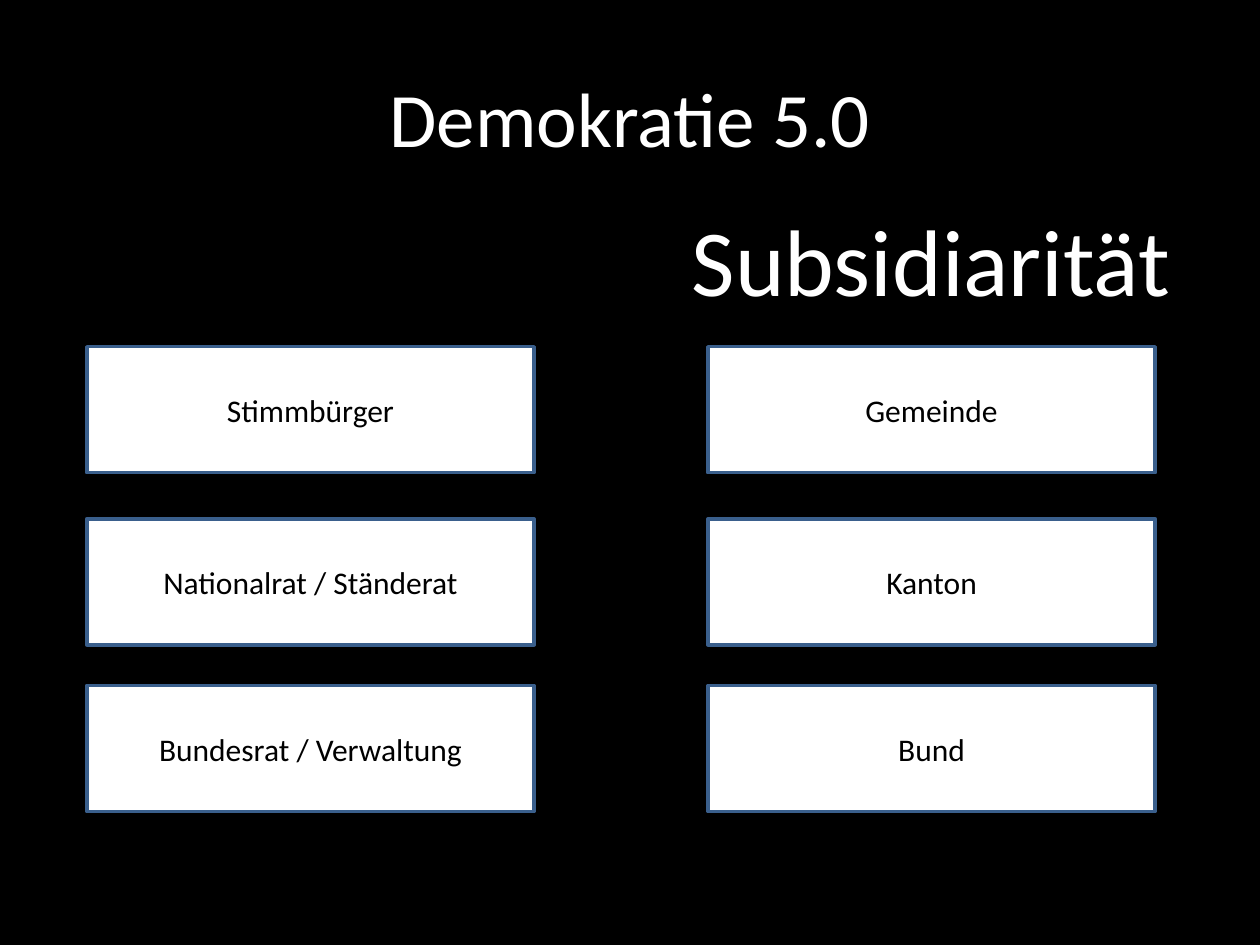
from dataclasses import dataclass

from lxml import etree
from pptx import Presentation, util as u
from pptx.dml.color import RGBColor
from pptx.enum import shapes, text
from pptx.oxml.ns import qn


@dataclass(frozen=True)
class Theme:
    font: str = "Calibri"
    black: RGBColor = RGBColor(0, 0, 0)
    white: RGBColor = RGBColor(255, 255, 255)
    edge: RGBColor = RGBColor(0x3A, 0x5F, 0x8C)
    title: int = 44
    head: int = 54
    label: int = 18


@dataclass(frozen=True)
class Stack:
    left: float
    labels: tuple[str, ...]


THEME = Theme()
TOPS = (6.99, 10.46, 13.82)
STACKS = (
    Stack(1.75, ("Stimmbürger", "Nationalrat / Ständerat",
                 "Bundesrat / Verwaltung")),
    Stack(14.27, ("Gemeinde", "Kanton", "Bund")),
)


def write(shape, words: str, size: int, color: RGBColor) -> None:
    """Put one centred line of text into a shape."""
    frame = shape.text_frame
    frame.text = words
    para = frame.paragraphs[0]
    para.alignment = text.PP_ALIGN.CENTER
    para.font.name = THEME.font
    para.font.size = u.Pt(size)
    para.font.color.rgb = color


def place(shape, left: float, top: float, width: float, height: float) -> None:
    shape.left, shape.top = u.Cm(left), u.Cm(top)
    shape.width, shape.height = u.Cm(width), u.Cm(height)


def draw_stack(slide, stack: Stack) -> None:
    """Draw a grouped column of labelled boxes."""
    group = slide.shapes.add_group_shape()
    for top, label in zip(TOPS, stack.labels):
        box = group.shapes.add_shape(
            shapes.MSO_SHAPE.RECTANGLE,
            u.Cm(stack.left), u.Cm(top), u.Cm(9.02), u.Cm(2.54))
        box.shadow.inherit = False
        box.fill.solid()
        box.fill.fore_color.rgb = THEME.white
        box.line.color.rgb = THEME.edge
        box.line.width = u.Pt(2)
        box.text_frame.vertical_anchor = text.MSO_ANCHOR.MIDDLE
        write(box, label, THEME.label, THEME.black)


def main() -> None:
    deck = Presentation()
    deck.slide_width, deck.slide_height = u.Cm(25.4), u.Cm(19.05)
    slide = deck.slides.add_slide(deck.slide_layouts[5])
    slide.background.fill.solid()
    slide.background.fill.fore_color.rgb = THEME.black

    # Title on a translucent panel
    title = slide.shapes.title
    place(title, 1.27, 0.76, 22.86, 3.18)
    title.fill.solid()
    title.fill.fore_color.rgb = THEME.black
    tint = title.fill._xPr.find(qn("a:solidFill"))[0]
    etree.SubElement(tint, qn("a:alpha"), val="61000")
    title.text_frame.vertical_anchor = text.MSO_ANCHOR.MIDDLE
    write(title, "Demokratie 5.0", THEME.title, THEME.white)

    # Two columns of levels
    for stack in STACKS:
        draw_stack(slide, stack)

    # Heading of the right column
    head = slide.shapes.add_textbox(
        u.Cm(13.64), u.Cm(3.94), u.Cm(10.26), u.Cm(2.57))
    head.text_frame.word_wrap = False
    head.text_frame.auto_size = text.MSO_AUTO_SIZE.SHAPE_TO_FIT_TEXT
    write(head, "Subsidiarität", THEME.head, THEME.white)

    deck.save("out.pptx")


if __name__ == "__main__":
    main()
